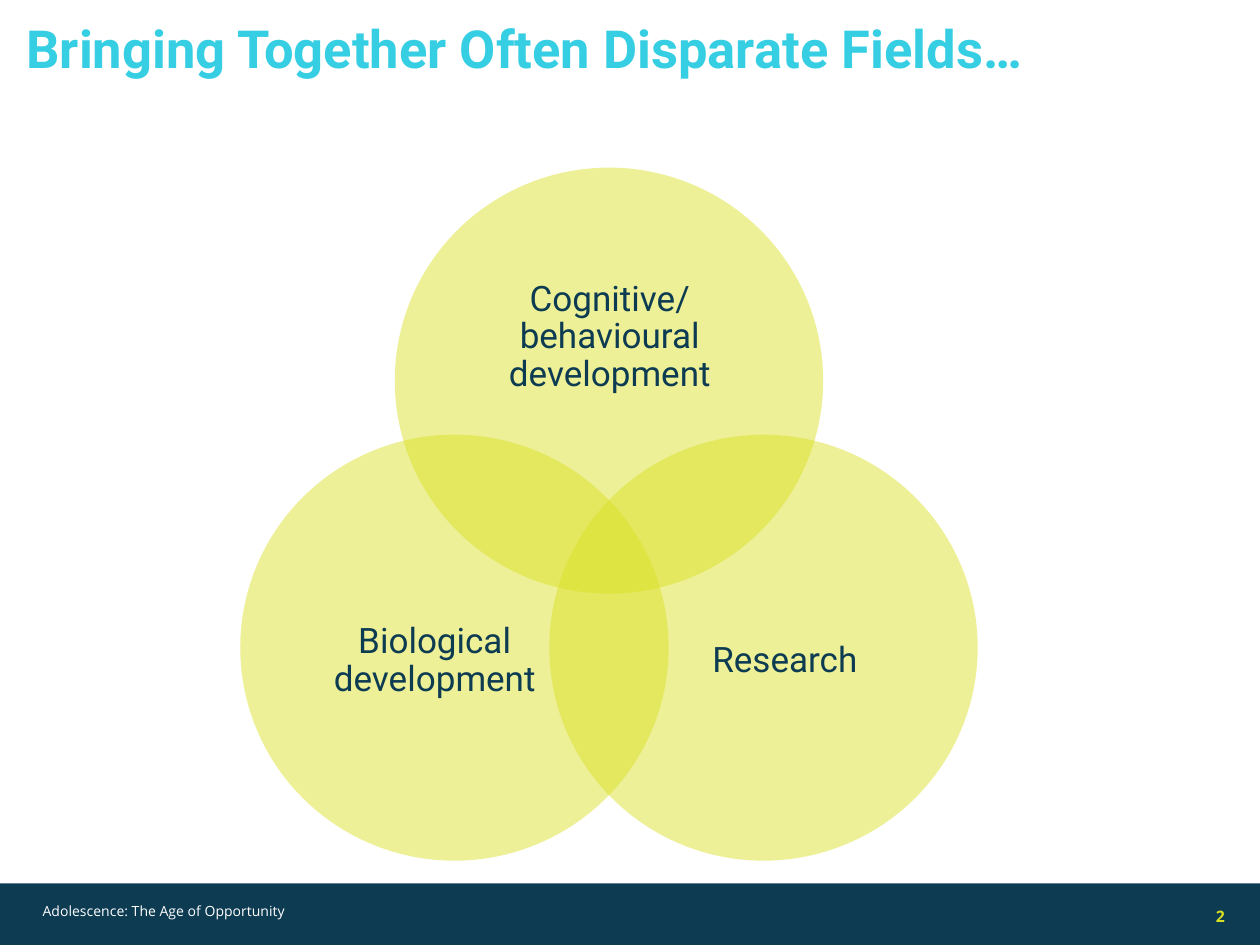
"""Build a slide with a three-circle Venn diagram of research fields."""
import pptx
import pptx.dml.color
import pptx.enum.shapes
import pptx.enum.text
import pptx.util
from lxml import etree
from pptx.oxml.ns import qn

Pt = pptx.util.Pt
RGBColor = pptx.dml.color.RGBColor
ALIGN = pptx.enum.text.PP_ALIGN
ANCHOR = pptx.enum.text.MSO_ANCHOR
SHAPE = pptx.enum.shapes.MSO_SHAPE

NAVY = RGBColor(0x0D, 0x3B, 0x52)
LIME = RGBColor(0xD9, 0xE0, 0x21)
CYAN = RGBColor(0x35, 0xCE, 0xE2)
WHITE = RGBColor(0xFF, 0xFF, 0xFF)

SLIDE_WIDTH, SLIDE_HEIGHT = 720, 540
BAR_TOP = 504.8
TITLE = "Bringing Together Often Disparate Fields…"
FOOTER = "Adolescence: The Age of Opportunity"
PAGE_NUMBER = "2"

CIRCLE_WIDTH, CIRCLE_HEIGHT = 244.8, 243.4
CIRCLE_OPACITY = 47
VENN_CENTER = 348
SIDE_OFFSET = 88.3
UPPER_TOP, LOWER_TOP = 95.8, 248.4
FIELDS = [
    ("Cognitive/ behavioural development", 0, UPPER_TOP, (258.5, 138.2, 180, 109.4)),
    ("Research", SIDE_OFFSET, LOWER_TOP, (360.7, 311, 175.7, 133.9)),
    ("Biological development", -SIDE_OFFSET, LOWER_TOP, (160.6, 311, 175.7, 133.9)),
]


def add_shape(slide, kind, box, color, opacity=100):
    shape = slide.shapes.add_shape(kind, *map(Pt, box))
    shape.shadow.inherit = False
    shape.fill.solid()
    shape.fill.fore_color.rgb = color
    shape.line.fill.background()
    if opacity < 100:
        color_element = shape.fill._xPr.find(qn("a:solidFill"))[0]
        etree.SubElement(color_element, qn("a:alpha"), val=str(opacity * 1000))


def add_text(slide, text, box, font_name, size, color, bold=False,
             align=ALIGN.LEFT, anchor=ANCHOR.TOP, margins=(0, 0), spacing=1.0):
    frame = slide.shapes.add_textbox(*map(Pt, box)).text_frame
    frame.word_wrap = True
    frame.vertical_anchor = anchor
    frame.margin_left = frame.margin_right = Pt(margins[0])
    frame.margin_top = frame.margin_bottom = Pt(margins[1])
    frame.text = text
    paragraph = frame.paragraphs[0]
    paragraph.alignment = align
    paragraph.line_spacing = spacing
    font = paragraph.runs[0].font
    font.name, font.size, font.bold = font_name, Pt(size), bold
    font.color.rgb = color


def main():
    presentation = pptx.Presentation()
    presentation.slide_width = Pt(SLIDE_WIDTH)
    presentation.slide_height = Pt(SLIDE_HEIGHT)
    slide = presentation.slides.add_slide(presentation.slide_layouts[6])

    bar_box = (0, BAR_TOP, SLIDE_WIDTH, SLIDE_HEIGHT - BAR_TOP)
    add_shape(slide, SHAPE.RECTANGLE, bar_box, NAVY)
    add_text(slide, PAGE_NUMBER, (659.5, 509, 47.5, 28.8), "Open Sans", 9, LIME,
             bold=True, align=ALIGN.RIGHT, anchor=ANCHOR.MIDDLE, margins=(7.2, 3.6))
    add_text(slide, TITLE, (15.1, 22.3, 689, 51.8), "Roboto", 30, CYAN,
             bold=True, spacing=0.58)

    for label, offset, top, label_box in FIELDS:
        left = VENN_CENTER + offset - CIRCLE_WIDTH / 2
        add_shape(slide, SHAPE.OVAL, (left, top, CIRCLE_WIDTH, CIRCLE_HEIGHT),
                  LIME, CIRCLE_OPACITY)
    for label, offset, top, label_box in FIELDS:
        add_text(slide, label, label_box, "Roboto", 20, NAVY,
                 align=ALIGN.CENTER, anchor=ANCHOR.MIDDLE, spacing=0.9)

    add_text(slide, FOOTER, (17.3, 511.9, 457.9, 22.3), "Open Sans", 8, WHITE,
             margins=(7.2, 3.6))
    presentation.save("out.pptx")


if __name__ == "__main__":
    main()
